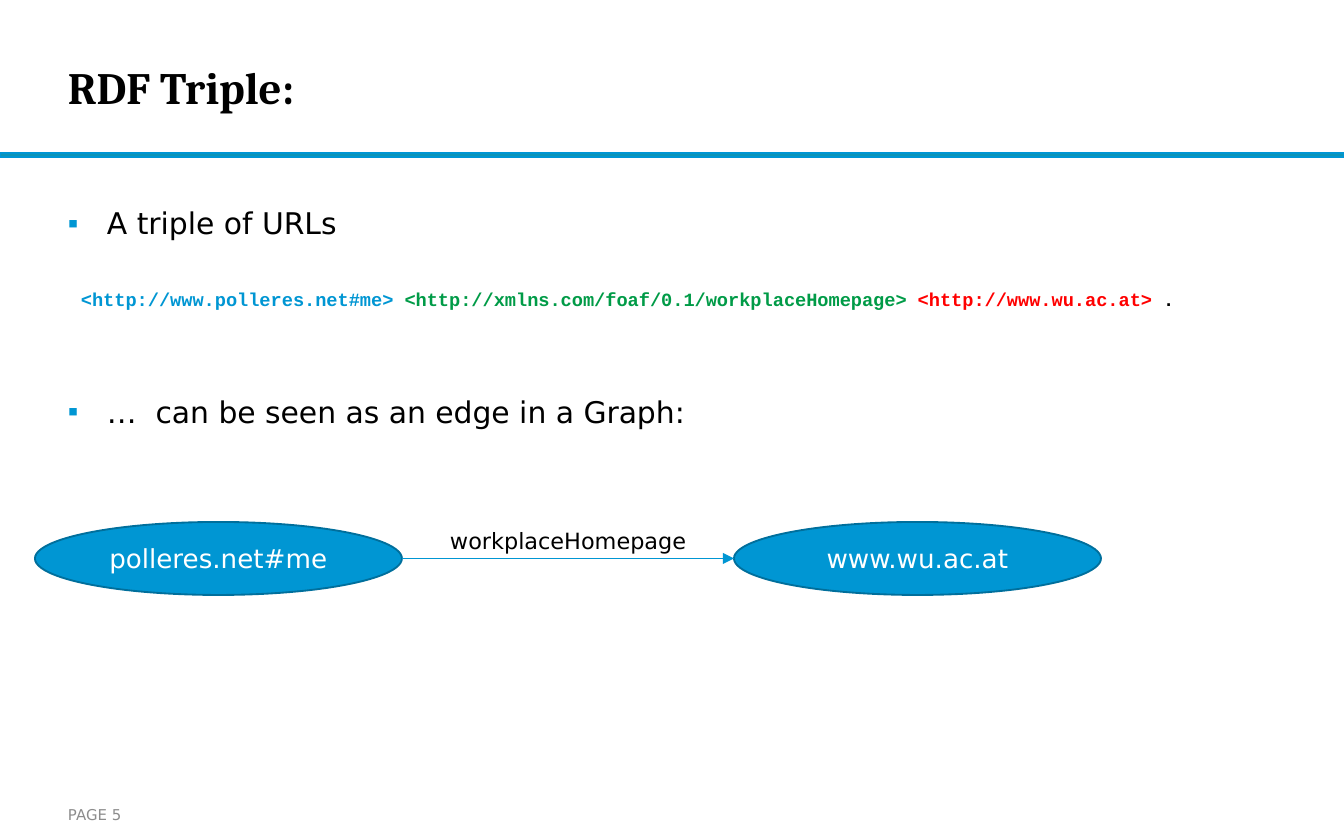
"""Build the slide that explains an RDF triple as an edge in a graph."""
import pptx
import pptx.dml.color
import pptx.enum.shapes
import pptx.enum.text
import pptx.oxml
import pptx.oxml.ns
import pptx.util

PX = 914400 / 134.4
BLUE, GREEN, RED, BLACK, WHITE = "0096D3", "009B47", "FF0000", "000000", "FFFFFF"
SANS = "DejaVu Sans"
ALIGN = pptx.enum.text.PP_ALIGN
ANCHOR = pptx.enum.text.MSO_ANCHOR


def px(*lengths):
    """Turn pixel lengths into EMU."""
    return [pptx.util.Emu(round(length * PX)) for length in lengths]


def color(hex_value):
    """Turn a hex string into a colour."""
    return pptx.dml.color.RGBColor.from_string(hex_value)


def put(target, values):
    """Set every attribute named in a dict."""
    for name, value in values.items():
        setattr(target, name, value)


def add_xml(parent, tag, **attributes):
    """Append a DrawingML element to a parent."""
    element = pptx.oxml.parse_xml(f"<a:{tag} {pptx.oxml.ns.nsdecls('a')}/>")
    for name, value in attributes.items():
        element.set(name, value)
    parent.append(element)
    return element


def add_run(paragraph, text, size, hex_value=BLACK, font=SANS, bold=False):
    """Add one formatted run."""
    run = paragraph.add_run()
    run.text = text
    put(run.font, {"name": font, "size": pptx.util.Pt(size), "bold": bold})
    run.font.color.rgb = color(hex_value)


def format_frame(frame, margins, anchor=ANCHOR.TOP, wrap=True):
    """Set the margins, anchor and wrapping of a text frame."""
    sides = ("margin_left", "margin_top", "margin_right", "margin_bottom")
    put(frame, dict(zip(sides, px(*margins))))
    put(frame, {"vertical_anchor": anchor, "word_wrap": wrap,
                "auto_size": pptx.enum.text.MSO_AUTO_SIZE.NONE})


def place(shape, *box):
    """Move and size a shape in pixels."""
    put(shape, dict(zip(("left", "top", "width", "height"), px(*box))))


def add_label(slide, box, runs, margins=(13, 7, 13, 7), **frame_format):
    """Add a one-line text box made of runs."""
    frame = slide.shapes.add_textbox(*px(*box)).text_frame
    format_frame(frame, margins, **frame_format)
    for run in runs:
        add_run(frame.paragraphs[0], *run)


def add_shape(slide, kind, box, fill, outline):
    """Add a filled preset shape with a thin outline."""
    shape = slide.shapes.add_shape(kind, *px(*box))
    shape.shadow.inherit = False
    shape.fill.solid()
    shape.fill.fore_color.rgb = color(fill)
    shape.line.color.rgb = color(outline)
    shape.line.width = pptx.util.Pt(1)
    return shape


def add_node(slide, left, text):
    """Add a graph node."""
    oval = pptx.enum.shapes.MSO_SHAPE.OVAL
    node = add_shape(slide, oval, (left, 522, 367, 73), BLUE, "006F9C")
    format_frame(node.text_frame, (13, 7, 13, 7), ANCHOR.MIDDLE)
    paragraph = node.text_frame.paragraphs[0]
    paragraph.alignment = ALIGN.CENTER
    add_run(paragraph, text, 14, WHITE)
    return node


def add_edge(slide, subject, target):
    """Add an arrow from one node to the node on its right."""
    straight = pptx.enum.shapes.MSO_CONNECTOR.STRAIGHT
    middle = subject.top + subject.height // 2
    edge = slide.shapes.add_connector(
        straight, subject.left + subject.width, middle, target.left, middle)
    edge.line.color.rgb = color(BLUE)
    edge.line.width = pptx.util.Pt(0.5)
    add_xml(edge.line._get_or_add_ln(), "tailEnd", type="triangle")
    add_xml(edge._element.spPr, "effectLst")


def fill_title(title, text):
    """Place and write the slide title."""
    place(title, 68, 20, 1005, 133)
    format_frame(title.text_frame, (0, 0, 0, 0), ANCHOR.MIDDLE)
    paragraph = title.text_frame.paragraphs[0]
    paragraph.alignment = ALIGN.LEFT
    add_run(paragraph, text, 24, font="Cambria", bold=True)


def fill_bullets(body, bullets):
    """Place the body and write (text, space before) bullets."""
    place(body, 68, 198, 1141, 566)
    frame = body.text_frame
    format_frame(frame, (0, 7, 0, 7))
    indent, = px(39)
    for index, (text, before) in enumerate(bullets):
        paragraph = frame.add_paragraph() if index else frame.paragraphs[0]
        put(paragraph, {"space_before": pptx.util.Pt(before),
                        "space_after": pptx.util.Pt(6), "alignment": ALIGN.LEFT})
        properties = paragraph._p.get_or_add_pPr()
        for name, value in {"marL": indent, "indent": -indent}.items():
            properties.set(name, str(int(value)))
        add_xml(add_xml(properties, "buClr"), "srgbClr", val=BLUE)
        add_xml(properties, "buChar", char="▪")
        add_run(paragraph, text, 16)


def main():
    """Build and save the slide."""
    deck = pptx.Presentation()
    deck.slide_width, deck.slide_height = px(1344, 840)
    slide = deck.slides.add_slide(deck.slide_layouts[1])

    rectangle = pptx.enum.shapes.MSO_SHAPE.RECTANGLE
    add_shape(slide, rectangle, (0, 153, 1344, 4), "0C94B7", BLUE)
    fill_title(slide.shapes.title, "RDF Triple:")
    fill_bullets(slide.placeholders[1], [
        ("A triple of URLs", 0),
        ("…  can be seen as an edge in a Graph:", 76),
    ])

    triple = [
        ("<http://www.polleres.net#me> ", BLUE),
        ("<http://xmlns.com/foaf/0.1/workplaceHomepage> ", GREEN),
        ("<http://www.wu.ac.at>", RED),
        (" .", BLACK),
    ]
    add_label(slide, (68, 281, 1173, 36),
              [(text, 10, tint, "Courier New", True) for text, tint in triple])

    subject = add_node(slide, 35, "polleres.net#me")
    target = add_node(slide, 734, "www.wu.ac.at")
    add_edge(slide, subject, target)
    add_label(slide, (437, 520, 263, 40), [("workplaceHomepage", 12)], wrap=False)
    add_label(slide, (68, 796, 132, 38), [("PAGE 5", 8, "8C8C8C")],
              margins=(0, 7, 0, 7), anchor=ANCHOR.MIDDLE)
    deck.save("out.pptx")


if __name__ == "__main__":
    main()
